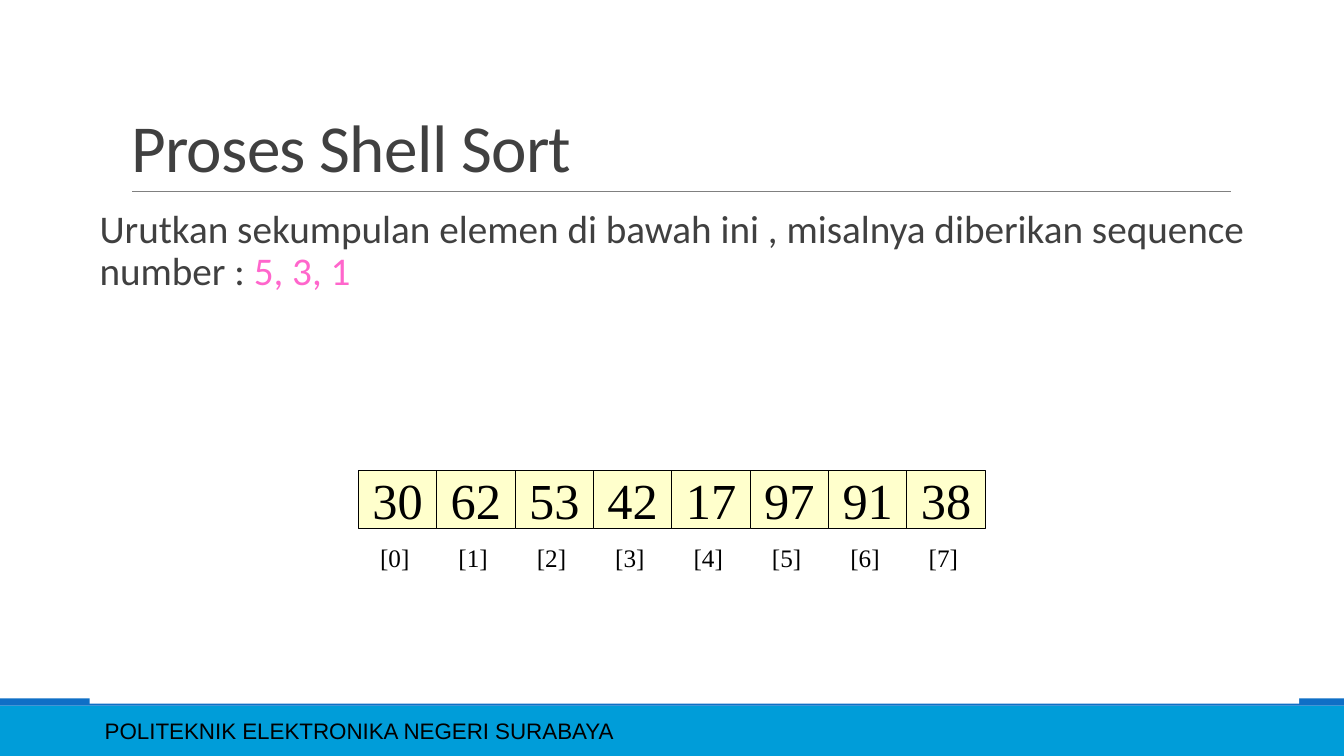
import pptx
import pptx.dml.color
import pptx.enum.shapes
import pptx.enum.text
import pptx.oxml.ns
import pptx.util
from lxml import etree

Cm = pptx.util.Cm
Pt = pptx.util.Pt
RGBColor = pptx.dml.color.RGBColor
Align = pptx.enum.text.PP_ALIGN
Anchor = pptx.enum.text.MSO_ANCHOR
Fit = pptx.enum.text.MSO_AUTO_SIZE
qn = pptx.oxml.ns.qn

BLACK = RGBColor(0x00, 0x00, 0x00)
WHITE = RGBColor(0xFF, 0xFF, 0xFF)
DARK = RGBColor(0x40, 0x40, 0x40)
GRAY = RGBColor(0x80, 0x80, 0x80)
PINK = RGBColor(0xFF, 0x66, 0xCC)
CREAM = RGBColor(0xFF, 0xFF, 0xCC)
SKY = RGBColor(0x00, 0x9D, 0xD9)
BLUE = RGBColor(0x0F, 0x6F, 0xC6)

SERIF = "Times New Roman"
WIDE, HIGH = 33.87, 19.05
VALUES = [30, 62, 53, 42, 17, 97, 91, 38]
ROW_LEFT, ROW_TOP, ROW_WIDE, ROW_HIGH = 9.03, 11.86, 15.8, 1.47


def place(left, top, width, height):
    return Cm(left), Cm(top), Cm(width), Cm(height)


def add_run(para, text, font, size, color):
    run = para.add_run()
    run.text = text
    run.font.name = font
    run.font.size = Pt(size)
    run.font.color.rgb = color
    return run


def add_rect(slide, box, fill, line=None):
    kind = pptx.enum.shapes.MSO_SHAPE.RECTANGLE
    rect = slide.shapes.add_shape(kind, *place(*box))
    rect.shadow.inherit = False
    rect.fill.solid()
    rect.fill.fore_color.rgb = fill
    if line is None:
        rect.line.fill.background()
    else:
        rect.line.color.rgb = line
        rect.line.width = Pt(0.75)
    return rect


def add_label(slide, box, text, font, size, wrap):
    label = slide.shapes.add_textbox(*place(*box))
    frame = label.text_frame
    frame.word_wrap = wrap
    frame.vertical_anchor = Anchor.MIDDLE
    add_run(frame.paragraphs[0], text, font, size, BLACK)


def add_rule(slide, left, right, top):
    kind = pptx.enum.shapes.MSO_CONNECTOR.STRAIGHT
    rule = slide.shapes.add_connector(kind, Cm(left), Cm(top), Cm(right), Cm(top))
    rule.line.color.rgb = GRAY
    rule.line.width = Pt(0.5)
    etree.SubElement(rule._element.spPr, qn("a:effectLst"))


def set_title(slide, text):
    title = slide.shapes.title
    title.left, title.top, title.width, title.height = place(3.05, 0.79, 27.94, 4.04)
    frame = title.text_frame
    frame.word_wrap = True
    frame.auto_size = Fit.NONE
    frame.vertical_anchor = Anchor.BOTTOM
    para = frame.paragraphs[0]
    para.alignment = Align.LEFT
    para.line_spacing = 0.85
    run = add_run(para, text, "Calibri", 48, DARK)
    run.font._element.set("spc", "-50")


def add_task(slide):
    """Add the white body panel with the exercise text."""
    body = slide.shapes.add_textbox(*place(2.26, 5.16, 30.48, 12.57))
    body.fill.solid()
    body.fill.fore_color.rgb = WHITE
    frame = body.text_frame
    frame.word_wrap = True
    frame.margin_left = Cm(0.25)
    frame.margin_right = Cm(0)
    para = frame.paragraphs[0]
    para.line_spacing = 0.9
    task = "Urutkan sekumpulan elemen di bawah ini , misalnya diberikan sequence number : "
    add_run(para, task, "Calibri", 28, DARK)
    add_run(para, "5, 3, 1", "Calibri", 28, PINK)


def add_array(slide):
    """Add the row of values with its indexes below."""
    step = ROW_WIDE / len(VALUES)
    for index, value in enumerate(VALUES):
        left = ROW_LEFT + index * step
        cell = add_rect(slide, (left, ROW_TOP, step, ROW_HIGH), CREAM, BLACK)
        frame = cell.text_frame
        frame.word_wrap = False
        frame.vertical_anchor = Anchor.MIDDLE
        para = frame.paragraphs[0]
        para.alignment = Align.CENTER
        add_run(para, str(value), SERIF, 36, BLACK)
        box = (left + 0.3, 13.54, 1.27, 1.02)
        add_label(slide, box, f"[{index}]", SERIF, 18, False)


def main():
    deck = pptx.Presentation()
    deck.slide_width = Cm(WIDE)
    deck.slide_height = Cm(HIGH)
    slide = deck.slides.add_slide(deck.slide_layouts[5])

    add_rect(slide, (0, 17.78, WIDE, 1.27), SKY)
    add_rect(slide, (0, 17.6, WIDE, 0.18), BLUE)
    add_rule(slide, 3.33, 31.01, 4.83)
    school = "POLITEKNIK ELEKTRONIKA NEGERI SURABAYA"
    add_label(slide, (2.39, 17.91, 21.36, 1.02), school, "Arial", 16, True)
    set_title(slide, "Proses Shell Sort")
    add_task(slide)
    add_array(slide)
    deck.save("out.pptx")


if __name__ == "__main__":
    main()
